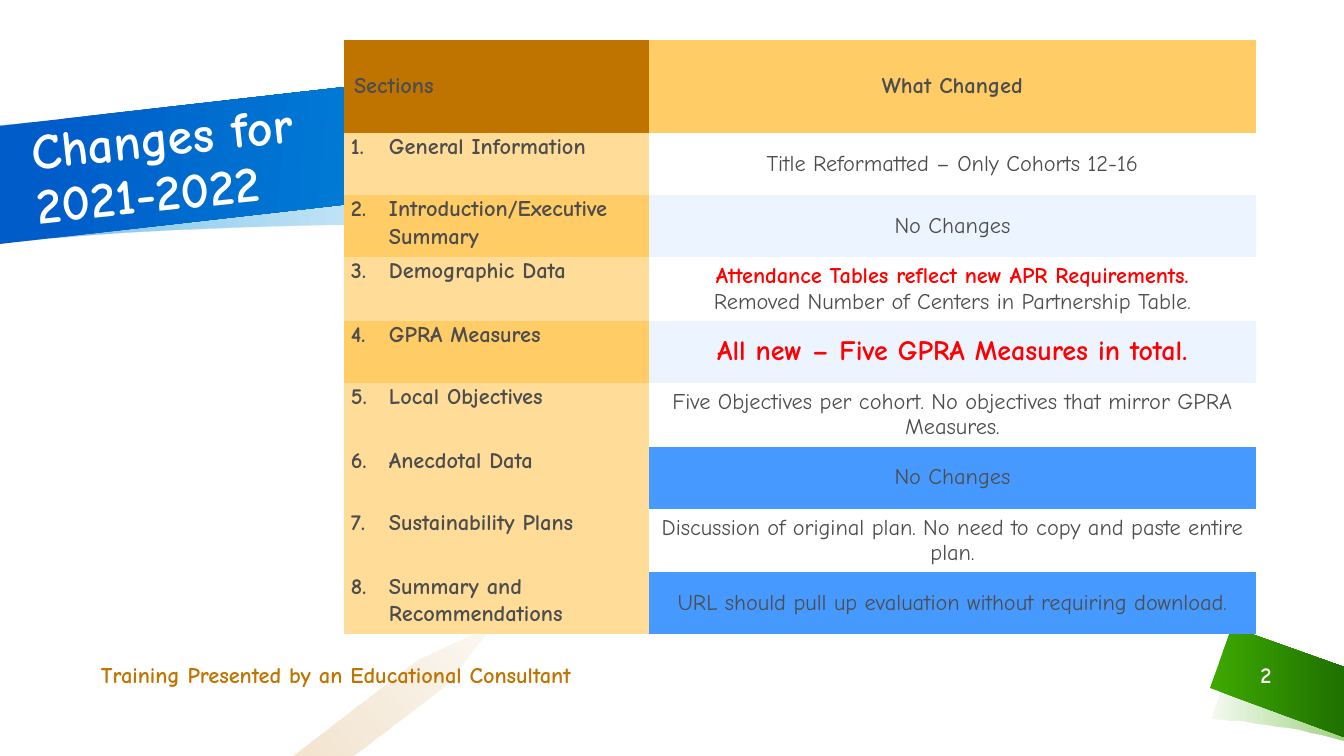
"""Build the slide that lists report changes for 2021-2022."""
from lxml import etree
from pptx import Presentation
from pptx import util as u
from pptx.dml import color
from pptx.enum import text
from pptx.oxml import ns

PX = 12192000 / 1344
THEME = {
    "font": "Comic Neue", "title": 36, "loud": 20, "body": 16,
    "ink": "4D4D4D", "white": "FFFFFF", "red": "FF0000", "brown": "C07400",
    "gold": "FFCC66", "sand": "FFDD99", "sky": "469AFF",
    "green": "3DA800", "moss": "1F7100", "blue": "005CC9", "aqua": "008EDC",
}
MID = text.MSO_ANCHOR.MIDDLE
MAIN = text.PP_ALIGN.CENTER


def write(par, words, hue="ink", size="body", bold=True, align=None, space=None):
    par.text = words
    par.alignment = align
    par.line_spacing = space
    for run in par.runs:
        run.font.name = THEME["font"]
        run.font.size = u.Pt(THEME[size])
        run.font.bold = bold
        run.font.color.rgb = color.RGBColor.from_string(THEME[hue])


def fade(node, alphas):
    for tone, alpha in zip(node.iter(ns.qn("a:srgbClr")), alphas):
        if alpha < 100:
            etree.SubElement(tone, ns.qn("a:alpha"), val=str(alpha * 1000))


deck = Presentation()
deck.slide_width, deck.slide_height = u.Emu(12192000), u.Emu(6858000)
slide = deck.slides.add_slide(deck.slide_layouts[6])

bands = [
    ([(1212, 719), (1212, 719, 1288, 724, 1344, 741), (1344, 673),
      (1282, 656, 1234, 657, 1234, 657)],
     0, [(3, "green", 6), (100, "green", 50)]),
    ([(1344, 667), (1232, 627), (1210, 688), (1344, 737)],
     0, [(3, "green", 100), (100, "moss", 100)]),
    ([(503, 229), (491, 114), (491, 114, 315, 95, 0, 126), (0, 243),
      (288, 214, 503, 229, 503, 229)],
     180, [(0, "aqua", 10), (88, "aqua", 50)]),
    ([(0, 244), (534, 183), (522, 67), (0, 126)],
     6, [(9, "blue", 100), (100, "aqua", 100)]),
    ([(494, 625), (418, 660), (292, 756), (353, 756), (445, 687)],
     139, [(0, "brown", 5), (100, "brown", 20)]),
]
for outline, angle, stops in bands:
    points = []
    for step in outline:
        if len(step) == 2:
            points.append(step)
            continue
        ax, ay = points[-1]
        bx, by, cx, cy, dx, dy = step
        for i in range(1, 17):
            t = i / 16
            s = 1 - t
            points.append((
                s**3 * ax + 3 * s * s * t * bx + 3 * s * t * t * cx + t**3 * dx,
                s**3 * ay + 3 * s * s * t * by + 3 * s * t * t * cy + t**3 * dy))
    pen = slide.shapes.build_freeform(*points[0], scale=PX)
    pen.add_line_segments(points[1:], close=True)
    band = pen.convert_to_shape()
    band.shadow.inherit = False
    band.line.fill.background()
    band.fill.gradient()
    band.fill.gradient_angle = 360 - angle
    for stop, (place, hue, alpha) in zip(band.fill.gradient_stops, stops):
        stop.position = place / 100
        stop.color.rgb = color.RGBColor.from_string(THEME[hue])
    fade(band._element.spPr, [alpha for _, _, alpha in stops])

labels = [
    ((23, 97, 506, 117), -6, 10, "Changes for\v2021-2022",
     dict(hue="white", size="title", space=0.9)),
    ((101, 655, 837, 40), 0, 0, "Training Presented by an Educational Consultant",
     dict(hue="brown")),
    ((1231, 655, 70, 40), 0, 10, "2", dict(hue="white", align=MAIN)),
]
for area, turn, inset, words, style in labels:
    box = slide.shapes.add_textbox(*[u.Emu(round(n * PX)) for n in area])
    box.rotation = turn
    frame = box.text_frame
    frame.word_wrap = True
    frame.vertical_anchor = MID
    frame.margin_left = u.Emu(round(inset * PX))
    write(frame.paragraphs[0], words, **style)

plain = dict(bold=False)
rows = [
    ("Sections", "brown", [("What Changed", {})], "gold", 100),
    ("General Information", "sand",
     [("Title Reformatted – Only Cohorts 12-16", plain)], "white", 100),
    ("Introduction/Executive Summary", "gold", [("No Changes", plain)], "sky", 10),
    ("Demographic Data", "sand",
     [("Attendance Tables reflect new APR Requirements.", dict(hue="red")),
      ("Removed Number of Centers in Partnership Table.", plain)], "white", 100),
    ("GPRA Measures", "gold",
     [("All new – Five GPRA Measures in total.", dict(hue="red", size="loud"))],
     "sky", 10),
    ("Local Objectives", "sand",
     [("Five Objectives per cohort. No objectives that mirror GPRA Measures.", plain)],
     "white", 100),
    ("Anecdotal Data", "sand", [("No Changes", plain)], "sky", 100),
    ("Sustainability Plans", "sand",
     [("Discussion of original plan. No need to copy and paste entire plan.", plain)],
     "white", 100),
    ("Summary and Recommendations", "sand",
     [("URL should pull up evaluation without requiring download.", plain)],
     "sky", 100),
]
area = (344, 40, 912, 93 + 62 * 8)
table = slide.shapes.add_table(
    len(rows), 2, *[u.Emu(round(n * PX)) for n in area]).table
table.horz_banding = False
look = table._tbl.tblPr.find(ns.qn("a:tableStyleId"))
look.text = "{2D5ABB26-0587-4C30-8999-92F81FD0307C}"
for col, width in zip(table.columns, (305, 607)):
    col.width = u.Emu(round(width * PX))

for i, (name, tint, notes, shade, alpha) in enumerate(rows):
    table.rows[i].height = u.Emu(round((62 if i else 93) * PX))
    left, right = table.cell(i, 0), table.cell(i, 1)
    for cell, hue in ((left, tint), (right, shade)):
        cell.fill.solid()
        cell.fill.fore_color.rgb = color.RGBColor.from_string(THEME[hue])
        cell.vertical_anchor = MID
    fade(right._tc.tcPr, [alpha])

    par = left.text_frame.paragraphs[0]
    write(par, name, space=1.07 if i else None)
    if i:
        left.vertical_anchor = text.MSO_ANCHOR.TOP
        left.margin_left = left.margin_right = u.Emu(round(7 * PX))
        left.margin_top = left.margin_bottom = 0
        props = par._p.get_or_add_pPr()
        props.set("marL", str(round(38 * PX)))
        props.set("indent", str(round(-38 * PX)))
        etree.SubElement(props, ns.qn("a:buAutoNum"),
                         type="arabicPeriod", startAt=str(i))

    frame = right.text_frame
    for k, (words, style) in enumerate(notes):
        par = frame.add_paragraph() if k else frame.paragraphs[0]
        write(par, words, align=MAIN, **style)

deck.save("out.pptx")
